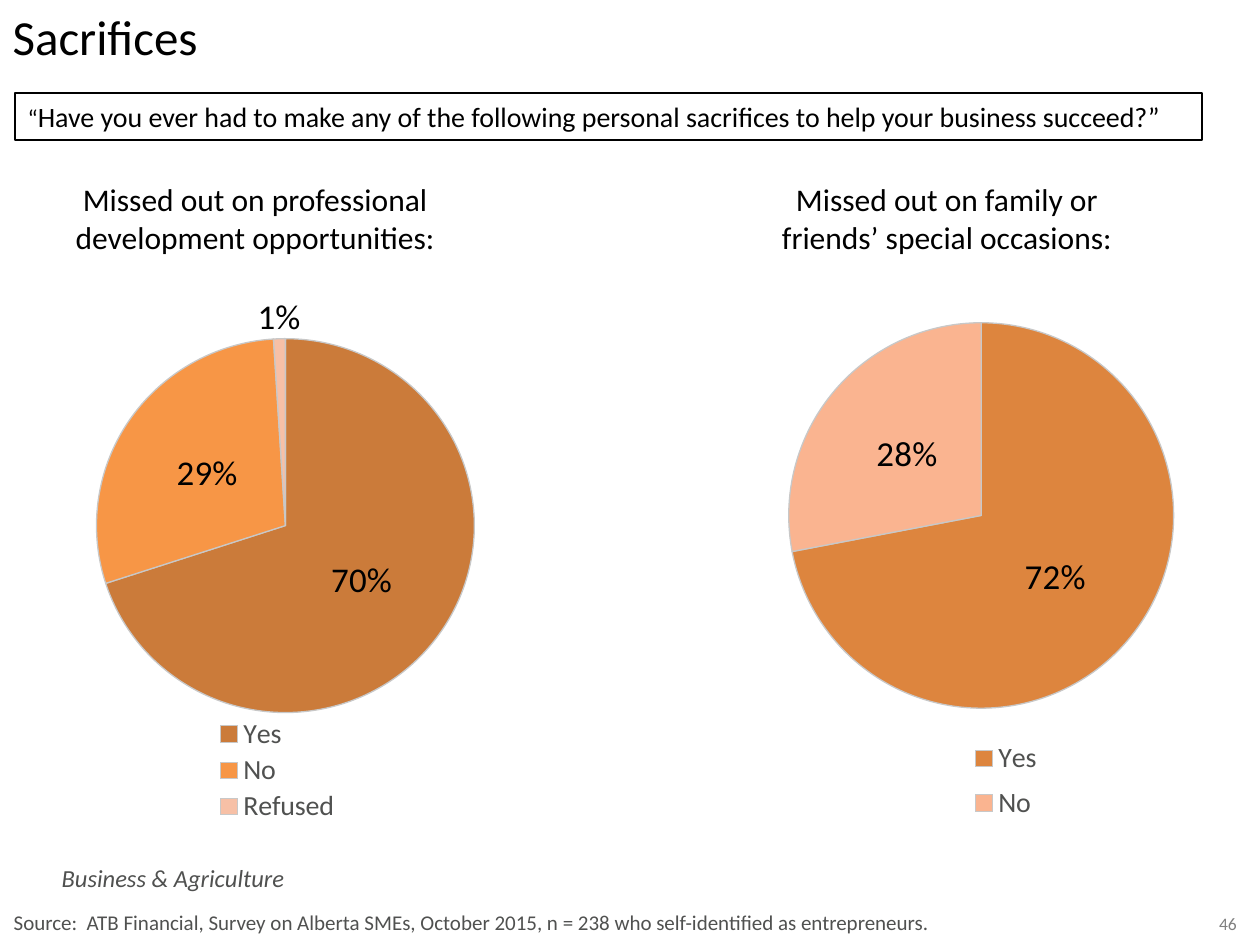
"""Build the survey slide on personal sacrifices, with two pie charts."""
from lxml.etree import SubElement
from pptx import Presentation
from pptx.chart.data import CategoryChartData
from pptx.dml.color import RGBColor
from pptx.enum.chart import XL_CHART_TYPE as ChartType
from pptx.enum.chart import XL_LABEL_POSITION as LabelPosition
from pptx.enum.chart import XL_LEGEND_POSITION as LegendPosition
from pptx.enum.shapes import MSO_SHAPE as Preset
from pptx.enum.text import MSO_ANCHOR as Anchor
from pptx.enum.text import PP_ALIGN as Align
from pptx.oxml.ns import qn
from pptx.util import Inches, Pt

FONT = "Calibri"
BLACK, GREY, PALE = "000000", "505150", "808080"
colour = RGBColor.from_string


def write_text(shape, *parts, sizes, ink=BLACK, align=Align.LEFT, anchor=Anchor.TOP, italic=False):
    frame = shape.text_frame
    frame.word_wrap = True
    frame.vertical_anchor = anchor
    paragraph = frame.paragraphs[0]
    paragraph.alignment = align
    for part, size in zip(parts, sizes):
        run = paragraph.add_run()
        run.text = part
        run.font.name, run.font.size, run.font.italic = FONT, Pt(size), italic
        run.font.color.rgb = colour(ink)


def set_layout(parent, index, box, inner=False):
    for old in parent.findall(qn("c:layout")):
        parent.remove(old)
    layout = SubElement(parent, qn("c:layout"))
    manual = SubElement(layout, qn("c:manualLayout"))
    settings = [("layoutTarget", "inner")] if inner else []
    settings += [("xMode", "edge"), ("yMode", "edge")] + list(zip("xywh", box))
    for name, value in settings:
        SubElement(manual, qn(f"c:{name}")).set("val", str(value))
    parent.insert(index, layout)


presentation = Presentation()
presentation.slide_width, presentation.slide_height = Inches(10), Inches(7.5)
slide = presentation.slides.add_slide(presentation.slide_layouts[5])
shapes = slide.shapes

title = shapes.title
title.left, title.top, title.width, title.height = 0, 0, Inches(10), Inches(0.79)
write_text(title, "Sacrifices", sizes=[28])

question = shapes.add_shape(Preset.RECTANGLE, Inches(0.12), Inches(0.74), Inches(9.42), Inches(0.37))
question.shadow.inherit = False
question.fill.background()
question.line.color.rgb = colour(BLACK)
question.line.width = Pt(1)
write_text(
    question,
    "“",
    "Have you ever had to make any of the following personal sacrifices to help your business succeed?”",
    sizes=[14, 16],
    anchor=Anchor.MIDDLE,
)

captions = [
    ("46", (9.5, 7.2, 0.49, 0.27), 10, PALE, Align.CENTER, False),
    ("Business & Agriculture", (0.39, 6.8, 2.81, 0.34), 14, GREY, Align.LEFT, True),
    (
        "Source:  ATB Financial, Survey on Alberta SMEs, October 2015, n = 238 who self-identified as entrepreneurs.",
        (0.01, 7.17, 9.31, 0.3), 12, GREY, Align.LEFT, False,
    ),
]
for text, box, size, ink, align, italic in captions:
    caption = shapes.add_textbox(*map(Inches, box))
    write_text(caption, text, sizes=[size], ink=ink, align=align, italic=italic)

pies = [
    (
        "Missed out on professional development opportunities:", 0.43, 3.23,
        [("Yes", 0.7, "CB7B3A"), ("No", 0.29, "F79646"), ("Refused", 0.01, "F7C0A6")],
        (0.07, 0.01, 0.93, 0.77), (0.33, 0.72, 0.37, 0.19),
    ),
    (
        "Missed out on family or friends’ special occasions:", 5.92, 3.29,
        [("Yes", 0.72, "DD853E"), ("No", 0.28, "FAB490")],
        (0.07, 0, 0.93, 0.77), (0.47, 0.75, 0.25, 0.17),
    ),
]
for heading, left, width, slices, plot_box, legend_box in pies:
    heading_box = shapes.add_textbox(Inches(left), Inches(1.38), Inches(3.19), Inches(0.7))
    write_text(heading_box, heading, sizes=[18], align=Align.CENTER)

    answers, shares, fills = zip(*slices)
    data = CategoryChartData(number_format="0%")
    data.categories = answers
    data.add_series("Series 1", shares)
    frame = shapes.add_chart(
        ChartType.PIE, Inches(left + 0.11), Inches(2.29), Inches(width), Inches(4.68), data
    )
    chart = frame.chart
    chart.has_title = False
    chart.font.name, chart.font.size = FONT, Pt(18)
    chart.font.color.rgb = colour(BLACK)

    chart.has_legend = True
    legend = chart.legend
    legend.position = LegendPosition.BOTTOM
    legend.include_in_layout = False
    legend.font.name, legend.font.size = FONT, Pt(16)
    legend.font.color.rgb = colour(GREY)
    set_layout(legend._element, 1, legend_box)
    set_layout(chart._chartSpace.find(".//" + qn("c:plotArea")), 0, plot_box, inner=True)

    plot = chart.plots[0]
    plot.vary_by_categories = True
    plot.has_data_labels = True
    labels = plot.data_labels
    labels.show_percentage, labels.show_value = True, False
    labels.number_format, labels.number_format_is_linked = "0%", False
    labels.position = LabelPosition.CENTER
    labels.font.name, labels.font.size = FONT, Pt(20)
    labels.font.color.rgb = colour(BLACK)

    for index, (share, fill) in enumerate(zip(shares, fills)):
        point = plot.series[0].points[index]
        point.format.fill.solid()
        point.format.fill.fore_color.rgb = colour(fill)
        point.format.line.color.rgb = colour("C8C8C8")
        point.format.line.width = Pt(0.75)
        label = point.data_label
        label.font.name, label.font.size = FONT, Pt(20)
        label.font.color.rgb = colour(BLACK)
        label.position = LabelPosition.OUTSIDE_END if share < 0.05 else LabelPosition.CENTER

presentation.save("out.pptx")
